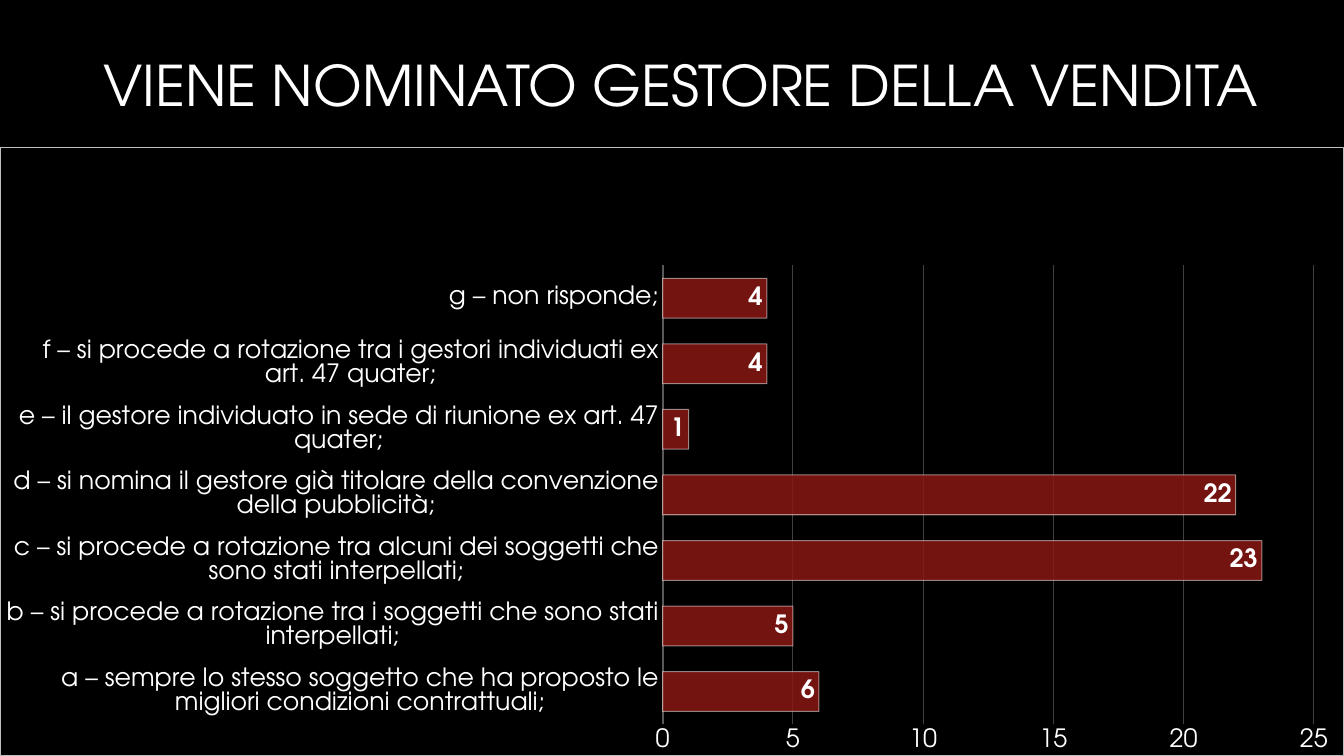
from lxml import etree
from pptx import Presentation, util as u
from pptx.chart.data import CategoryChartData
from pptx.dml.color import RGBColor
from pptx.enum import chart as ch, text
from pptx.oxml import parse_xml
from pptx.oxml.ns import nsdecls, qn

PX = 914400 / 100.8
FONT = "TeX Gyre Adventor"
COLOURS = {"background": "000000", "text": "FFFFFF", "bar": "891814",
           "border": "BFBFBF", "axis": "595959", "grid": "404040"}
ANSWERS = [
    ("a – sempre lo stesso soggetto che ha proposto le migliori condizioni contrattuali;", 6),
    ("b – si procede a rotazione tra i soggetti che sono stati interpellati;", 5),
    ("c – si procede a rotazione tra alcuni dei soggetti che sono stati interpellati;", 23),
    ("d – si nomina il gestore già titolare della convenzione della pubblicità;", 22),
    ("e – il gestore individuato in sede di riunione ex art. 47 quater;", 1),
    ("f – si procede a rotazione tra i gestori individuati ex art. 47 quater;", 4),
    ("g – non risponde;", 4),
]
PLOT = {"x": 0.493, "y": 0.194, "w": 0.485, "h": 0.755}


def px(length):
    return u.Emu(round(length * PX))


def colour(name):
    return RGBColor.from_string(COLOURS[name])


def style_font(font, size, bold=False):
    font.name = FONT
    font.size = u.Pt(size)
    font.bold = bold
    font.color.rgb = colour("text")


def style_line(line, name, points):
    line.color.rgb = colour(name)
    line.width = u.Pt(points)


def set_alpha(properties, percent):
    """Make the first colour inside the given element partly transparent."""
    rgb = properties.find(".//" + qn("a:srgbClr"))
    etree.SubElement(rgb, qn("a:alpha")).set("val", str(percent * 1000))


def add_title(page, title):
    box = page.shapes.add_textbox(px(76), px(17), px(1192), px(142))
    frame = box.text_frame
    frame.word_wrap = True
    frame.vertical_anchor = text.MSO_ANCHOR.MIDDLE
    frame.text = title
    para = frame.paragraphs[0]
    para.alignment = text.PP_ALIGN.RIGHT
    para.line_spacing = 0.9
    style_font(para.runs[0].font, 40)


def place_plot(chart):
    """Fix the inner plot area as fractions of the chart."""
    area = chart.plots[0]._element.getparent()
    for layout in area.findall(qn("c:layout")):
        area.remove(layout)
    sizes = "".join(f'<c:{key} val="{value}"/>' for key, value in PLOT.items())
    area.insert(0, parse_xml(
        f'<c:layout {nsdecls("c")}><c:manualLayout><c:layoutTarget val="inner"/>'
        f'<c:xMode val="edge"/><c:yMode val="edge"/>{sizes}'
        '</c:manualLayout></c:layout>'))


def frame_chart(chart):
    """Give the chart area its border and no fill."""
    area = chart.plots[0]._element.getparent().getparent()
    area.addnext(parse_xml(
        f'<c:spPr {nsdecls("c", "a")}><a:noFill/><a:ln w="{u.Pt(0.75)}"><a:solidFill>'
        f'<a:srgbClr val="{COLOURS["border"]}"/></a:solidFill></a:ln></c:spPr>'))


def style_axes(chart):
    for axis in (chart.category_axis, chart.value_axis):
        axis.major_tick_mark = axis.minor_tick_mark = ch.XL_TICK_MARK.NONE
        style_font(axis.tick_labels.font, 18)
    style_line(chart.category_axis.format.line, "axis", 1.5)
    values = chart.value_axis
    values.minimum_scale, values.maximum_scale, values.major_unit = 0, 25, 5
    values.format.line.fill.background()
    values.has_major_gridlines = True
    style_line(values.major_gridlines.format.line, "grid", 0.75)
    values.tick_labels.number_format = "0"
    values.tick_labels.number_format_is_linked = False


def style_bars(plot):
    plot.gap_width = 65
    plot.vary_by_categories = False
    look = plot.series[0].format
    look.fill.solid()
    look.fill.fore_color.rgb = colour("bar")
    style_line(look.line, "text", 0.75)
    properties = plot.series[0]._element.find(qn("c:spPr"))
    set_alpha(properties.find(qn("a:solidFill")), 85)
    set_alpha(properties.find(qn("a:ln")), 50)
    labels = plot.series[0].data_labels
    labels.show_value = True
    labels.position = ch.XL_LABEL_POSITION.INSIDE_END
    labels.number_format = "0"
    labels.number_format_is_linked = False
    style_font(labels.font, 18, bold=True)


def add_answer_chart(page):
    data = CategoryChartData(number_format="0")
    data.categories = [answer for answer, _ in ANSWERS]
    data.add_series("Series 1", [count for _, count in ANSWERS])
    chart = page.shapes.add_chart(ch.XL_CHART_TYPE.BAR_CLUSTERED, px(0), px(147),
                                  px(1344), px(609), data).chart
    chart.has_title = False
    chart.has_legend = False
    style_font(chart.font, 18)
    style_axes(chart)
    style_bars(chart.plots[0])
    place_plot(chart)
    frame_chart(chart)


def main():
    deck = Presentation()
    deck.slide_width, deck.slide_height = px(1344), px(756)
    page = deck.slides.add_slide(deck.slide_layouts[6])
    page.background.fill.solid()
    page.background.fill.fore_color.rgb = colour("background")
    add_title(page, "VIENE NOMINATO GESTORE DELLA VENDITA")
    add_answer_chart(page)
    deck.save("out.pptx")


if __name__ == "__main__":
    main()
